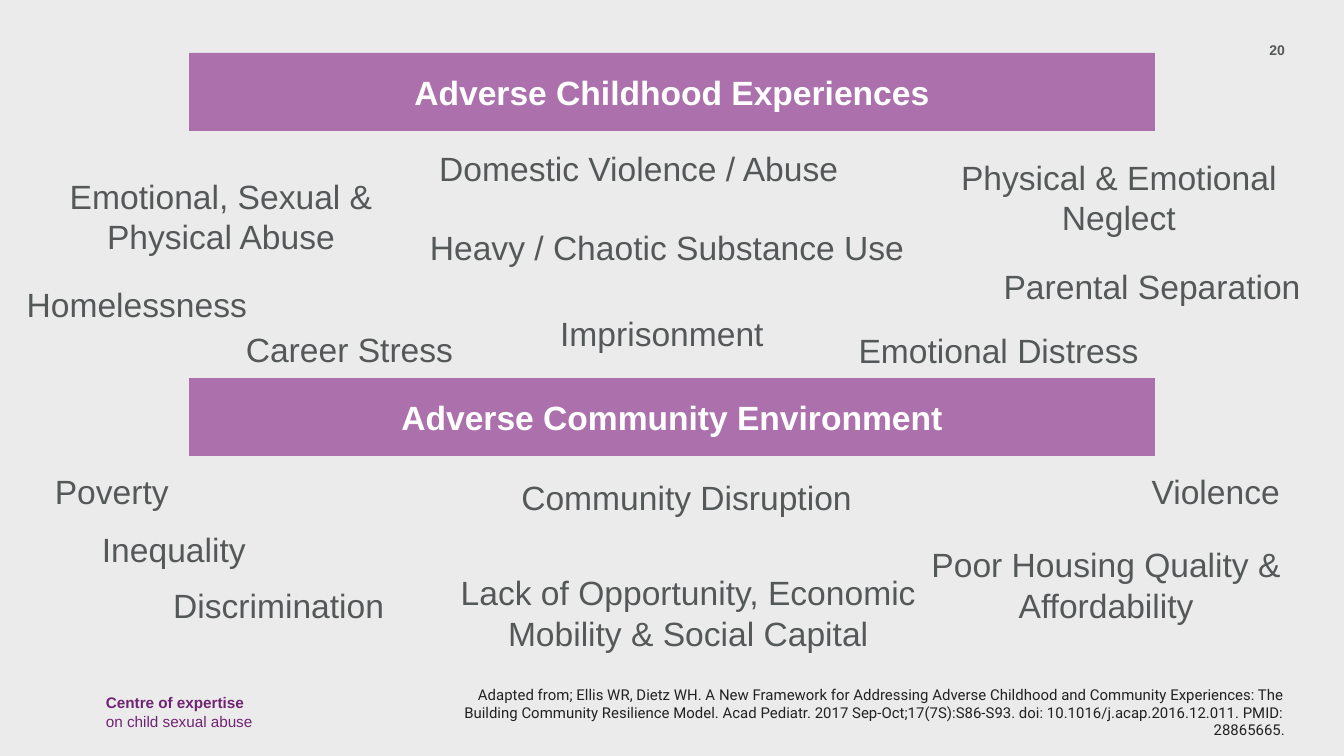
"""Builds a slide on adverse childhood experiences and community environments."""
from pptx import Presentation
from pptx.dml.color import RGBColor
from pptx.enum import shapes, text as t
from pptx.util import Pt

BACKGROUND = RGBColor(0xEC, 0xEB, 0xEC)
MAUVE = RGBColor(0xAC, 0x70, 0xAD)
PURPLE = RGBColor(0x70, 0x24, 0x74)
GREY = RGBColor(0x55, 0x58, 0x59)
INK = RGBColor(0x21, 0x21, 0x21)
WHITE = RGBColor(0xFF, 0xFF, 0xFF)

LEFT, CENTER, RIGHT = t.PP_ALIGN.LEFT, t.PP_ALIGN.CENTER, t.PP_ALIGN.RIGHT

BANNERS = [("Adverse Childhood Experiences", 28.3), ("Adverse Community Environment", 202.5)]
LABELS = [
    ("Parental Separation", 530.6, 139, 208),
    ("Inequality", 47.5, 280, 137.5),
    ("Discrimination", 85.7, 309.6, 137.5),
    ("Community Disruption", 272.2, 252, 219),
    ("Violence", 609.8, 249, 110),
    ("Poverty", 22.3, 249, 87),
    ("Heavy / Chaotic Substance Use", 223.2, 118.1, 281),
    ("Domestic Violence / Abuse", 228.2, 75.6, 256),
    ("Career Stress", 124.6, 172.8, 134),
    ("Emotional Distress", 452.9, 173.2, 189),
    ("Imprisonment", 293, 164.2, 134),
    ("Homelessness", 7.2, 148.3, 134),
]
WRAPPED_LABELS = [
    ("Poor Housing Quality & Affordability", 476.6, 288, 232),
    ("Lack of Opportunity, Economic Mobility & Social Capital", 228.2, 303.1, 281),
    ("Emotional, Sexual & Physical Abuse", 19.4, 90.7, 198),
    ("Physical & Emotional Neglect", 495.4, 80.6, 208),
]
CITATION = (
    "Adapted from; Ellis WR, Dietz WH. A New Framework for Addressing Adverse Childhood "
    "and Community Experiences: The Building Community Resilience Model. Acad Pediatr. "
    "2017 Sep-Oct;17(7S):S86-S93. doi: 10.1016/j.acap.2016.12.011. PMID: 28865665."
)


def write(p, text, size=18, color=GREY, bold=False, font="Arial", align=LEFT):
    p.alignment = align
    r = p.add_run()
    r.text = text
    r.font.name, r.font.size, r.font.bold = font, Pt(size), bold
    r.font.color.rgb = color


class Deck:
    def __init__(self, width, height):
        self.prs = Presentation()
        self.prs.slide_width, self.prs.slide_height = Pt(width), Pt(height)
        self.s = None

    def slide(self):
        self.s = self.prs.slides.add_slide(self.prs.slide_layouts[6])
        fill = self.s.background.fill
        fill.solid()
        fill.fore_color.rgb = BACKGROUND

    def textbox(self, left, top, width, height):
        tf = self.s.shapes.add_textbox(Pt(left), Pt(top), Pt(width), Pt(height)).text_frame
        tf.word_wrap = True
        return tf.paragraphs[0]

    def label(self, text, left, top, width, height=29, **fmt):
        write(self.textbox(left, top, width, height), text, **fmt)

    def banner(self, text, top):
        sp = self.s.shapes.add_shape(
            shapes.MSO_SHAPE.RECTANGLE, Pt(101.3), Pt(top), Pt(517.5), Pt(41.8))
        sp.shadow.inherit = False
        sp.fill.solid()
        sp.fill.fore_color.rgb = MAUVE
        sp.line.fill.background()
        tf = sp.text_frame
        tf.vertical_anchor = t.MSO_ANCHOR.MIDDLE
        write(tf.paragraphs[0], text, color=WHITE, bold=True, align=CENTER)

    def signature(self, name, subject):
        p = self.textbox(49.7, 367.9, 129, 27.4)
        write(p, name, size=8.2, color=PURPLE, bold=True)
        p.add_line_break()
        write(p, subject, size=8.2, color=PURPLE)


def main():
    deck = Deck(720, 405)
    deck.slide()
    deck.signature("Centre of expertise", "on child sexual abuse")
    deck.label("20", 658.8, 18.7, 36.7, 18.7, size=7.5, bold=True, align=RIGHT)
    deck.label(CITATION, 229, 363.6, 466.5, 26.6,
               size=8, color=INK, font="Roboto", align=RIGHT)
    for banner in BANNERS:
        deck.banner(*banner)
    for label in LABELS:
        deck.label(*label)
    for label in WRAPPED_LABELS:
        deck.label(*label, height=51, align=CENTER)
    deck.prs.save("out.pptx")


if __name__ == "__main__":
    main()
